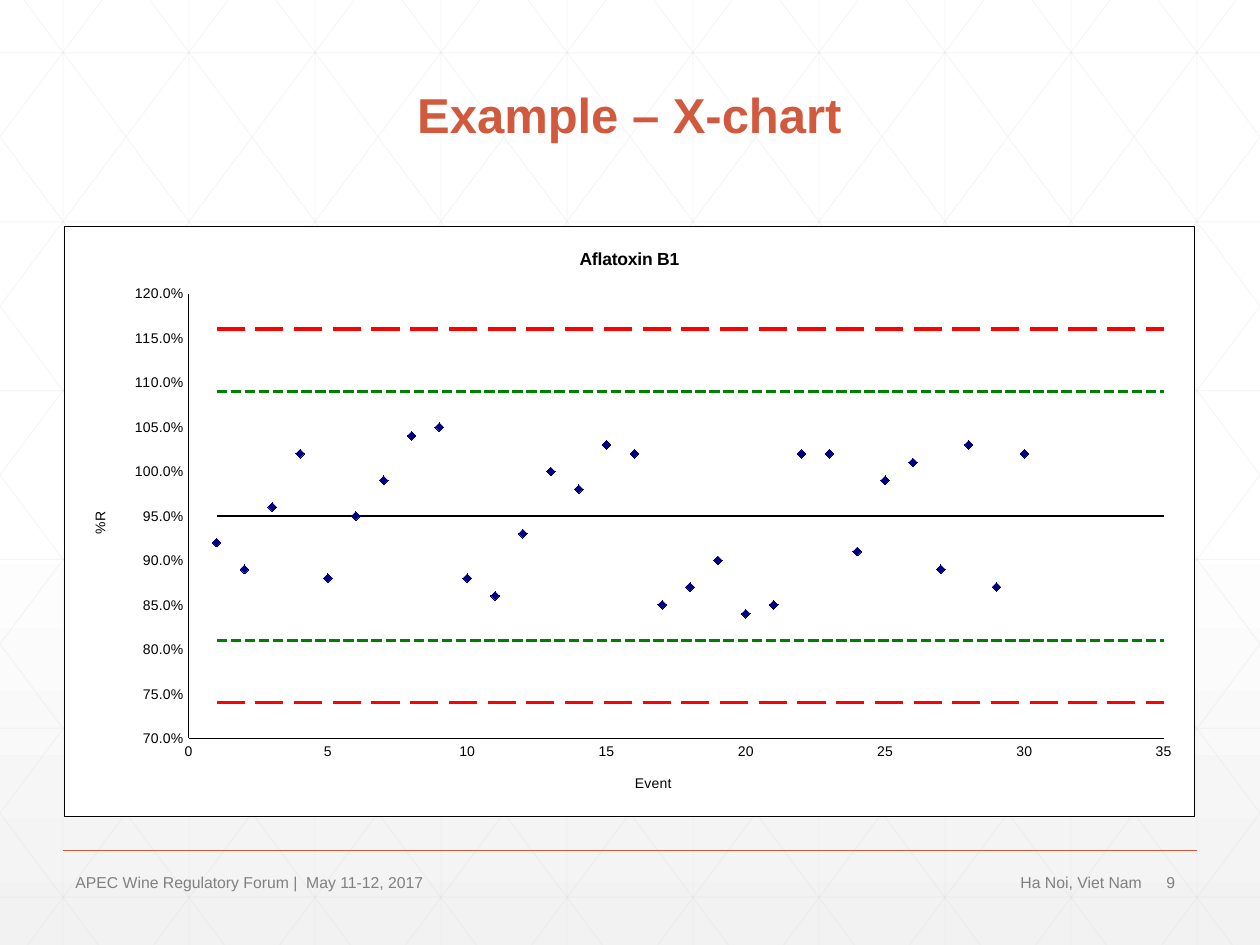
import pptx
import pptx.chart.data
import pptx.dml.color
import pptx.enum.chart
import pptx.enum.dml
import pptx.enum.text
import pptx.oxml
import pptx.oxml.ns
import pptx.util
from lxml import etree

Inches = pptx.util.Inches
Pt = pptx.util.Pt
RGB = pptx.dml.color.RGBColor.from_string
qn = pptx.oxml.ns.qn
DASH = pptx.enum.dml.MSO_LINE
ALIGN = pptx.enum.text.PP_ALIGN

THEME = {
    "font": "Arial", "accent": "D15A3E", "footer": "808080", "mesh": "D9D9D9",
    "white": "FFFFFF", "shade": "F2F2F2", "ink": "000000", "point": "000080",
    "warning": "008000", "action": "FF0000",
    "title_size": 28, "footer_size": 9, "chart_title_size": 10, "chart_size": 8,
}
WIDTH, HEIGHT = 10, 7.5

deck = pptx.Presentation()
deck.slide_width, deck.slide_height = Inches(WIDTH), Inches(HEIGHT)
slide = deck.slides.add_slide(deck.slide_layouts[6])

backdrop = slide.background.fill
backdrop.gradient()
backdrop.gradient_angle = 270
for stop, position, color in zip(backdrop.gradient_stops, (0.53, 1), ("white", "shade")):
    stop.position = position
    stop.color.rgb = RGB(THEME[color])


def add_rule(x1, y1, x2, y2, color, weight, opacity=100):
    rule = slide.shapes.add_connector(
        pptx.enum.shapes.MSO_CONNECTOR.STRAIGHT,
        Inches(x1), Inches(y1), Inches(x2), Inches(y2))
    rule.line.color.rgb = RGB(THEME[color])
    rule.line.width = Pt(weight)
    properties = rule._element.spPr
    if opacity < 100:
        tint = properties.find(".//" + qn("a:srgbClr"))
        etree.SubElement(tint, qn("a:alpha")).set("val", str(opacity * 1000))
    etree.SubElement(properties, qn("a:effectLst"))


def add_label(text, left, top, width, height, align, color, size, bold=False):
    frame = slide.shapes.add_textbox(
        Inches(left), Inches(top), Inches(width), Inches(height)).text_frame
    frame.word_wrap = True
    frame.vertical_anchor = pptx.enum.text.MSO_ANCHOR.MIDDLE
    frame.text = text
    line = frame.paragraphs[0]
    line.alignment = align
    font = line.runs[0].font
    font.name, font.size, font.bold = THEME["font"], Pt(THEME[size]), bold
    font.color.rgb = RGB(THEME[color])


mesh = [(0.5 + i, 0, 0.5 + i, HEIGHT) for i in range(10)]
mesh += [(0, 0.42 + 1.34 * i, WIDTH, 0.42 + 1.34 * i) for i in range(6)]
run = 5.59
slope = HEIGHT / run
for i in range(-5, 10):
    start = 0.19 + i
    x1, x2 = max(start, 0), min(start + run, WIDTH)
    y1, y2 = (x1 - start) * slope, (x2 - start) * slope
    mesh += [(x1, y1, x2, y2), (WIDTH - x1, y1, WIDTH - x2, y2)]
for ends in mesh:
    add_rule(*ends, "mesh", 0.5, 25)
add_rule(0.5, 6.75, 9.5, 6.75, "accent", 1)

add_label("Example – X-chart", 0.51, 0.41, 8.97, 0.99, ALIGN.CENTER, "accent", "title_size", True)
for text, left, width, align in (
    ("9", 9.16, 0.34, ALIGN.LEFT),
    ("APEC Wine Regulatory Forum |  May 11-12, 2017", 0.5, 5.03, ALIGN.LEFT),
    ("Ha Noi, Viet Nam", 5.58, 3.58, ALIGN.RIGHT),
):
    add_label(text, left, 6.88, width, 0.24, align, "footer", "footer_size")

recoveries = [
    0.92, 0.89, 0.96, 1.02, 0.88, 0.95, 0.99, 1.04, 1.05, 0.88,
    0.86, 0.93, 1, 0.98, 1.03, 1.02, 0.85, 0.87, 0.9, 0.84,
    0.85, 1.02, 1.02, 0.91, 0.99, 1.01, 0.89, 1.03, 0.87, 1.02,
]
limits = [
    (0.95, "ink", 1, DASH.SOLID),
    (1.09, "warning", 2, DASH.SQUARE_DOT),
    (1.16, "action", 2, DASH.LONG_DASH),
    (0.74, "action", 2, DASH.LONG_DASH),
    (0.81, "warning", 2, DASH.SQUARE_DOT),
]
measurements = pptx.chart.data.XyChartData()
events = measurements.add_series("Series 1")
for event, recovery in enumerate(recoveries, 1):
    events.add_data_point(event, recovery)
for number, (level, *_) in enumerate(limits, 2):
    limit = measurements.add_series(f"Series {number}")
    for event in (1, 35):
        limit.add_data_point(event, level)

chart = slide.shapes.add_chart(
    pptx.enum.chart.XL_CHART_TYPE.XY_SCATTER, Inches(0.51), Inches(1.79),
    Inches(8.97), Inches(4.69), measurements).chart
chart.has_legend = False
chart.font.name, chart.font.size = THEME["font"], Pt(THEME["chart_size"])
chart.font.color.rgb = RGB(THEME["ink"])
chart.plots[0].vary_by_categories = False

chart.has_title = True
chart.chart_title.include_in_layout = False
titles = [(chart.chart_title, "Aflatoxin B1", "chart_title_size", True)]
for axis, name, low, high, step, number_format in (
    (chart.category_axis, "Event", 0, 35, 5, "General"),
    (chart.value_axis, "%R", 0.7, 1.2, 0.05, "0.0%"),
):
    axis.minimum_scale, axis.maximum_scale, axis.major_unit = low, high, step
    axis.has_major_gridlines = False
    axis.major_tick_mark = axis.minor_tick_mark = pptx.enum.chart.XL_TICK_MARK.NONE
    axis.tick_labels.number_format = number_format
    axis.tick_labels.number_format_is_linked = False
    axis.format.line.color.rgb = RGB(THEME["ink"])
    axis.format.line.width = Pt(0.25)
    axis.has_title = True
    titles.append((axis.axis_title, name, "chart_size", False))
for title, text, size, bold in titles:
    title.text_frame.text = text
    font = title.text_frame.paragraphs[0].runs[0].font
    font.name, font.size, font.bold = THEME["font"], Pt(THEME[size]), bold
    font.color.rgb = RGB(THEME["ink"])

points, *limit_lines = chart.plots[0].series
points.format.line.fill.background()
points.marker.style = pptx.enum.chart.XL_MARKER_STYLE.DIAMOND
points.marker.size = 5
points.marker.format.fill.solid()
points.marker.format.fill.fore_color.rgb = RGB(THEME["point"])
points.marker.format.line.color.rgb = RGB(THEME["point"])
for series, (_, color, weight, dash) in zip(limit_lines, limits):
    series.smooth = False
    series.marker.style = pptx.enum.chart.XL_MARKER_STYLE.NONE
    series.format.line.color.rgb = RGB(THEME[color])
    series.format.line.width = Pt(weight)
    series.format.line.dash_style = dash

chart_space = chart._chartSpace
plot_area = chart_space.chart.plotArea
for automatic in plot_area.findall(qn("c:layout")):
    plot_area.remove(automatic)
layout = etree.Element(qn("c:layout"))
manual = etree.SubElement(layout, qn("c:manualLayout"))
for tag, value in (
    ("layoutTarget", "inner"), ("xMode", "edge"), ("yMode", "edge"),
    ("x", "0.11"), ("y", "0.115"), ("w", "0.863"), ("h", "0.753"),
):
    etree.SubElement(manual, qn("c:" + tag)).set("val", value)
plot_area.insert(0, layout)

panel = pptx.oxml.parse_xml(
    f'<c:spPr {pptx.oxml.ns.nsdecls("c", "a")}>'
    f'<a:solidFill><a:srgbClr val="{THEME["white"]}"/></a:solidFill>'
    f'<a:ln w="{Pt(0.25)}"><a:solidFill><a:srgbClr val="{THEME["ink"]}"/></a:solidFill></a:ln>'
    '</c:spPr>')
chart_space.chart.addnext(panel)

deck.save("out.pptx")
